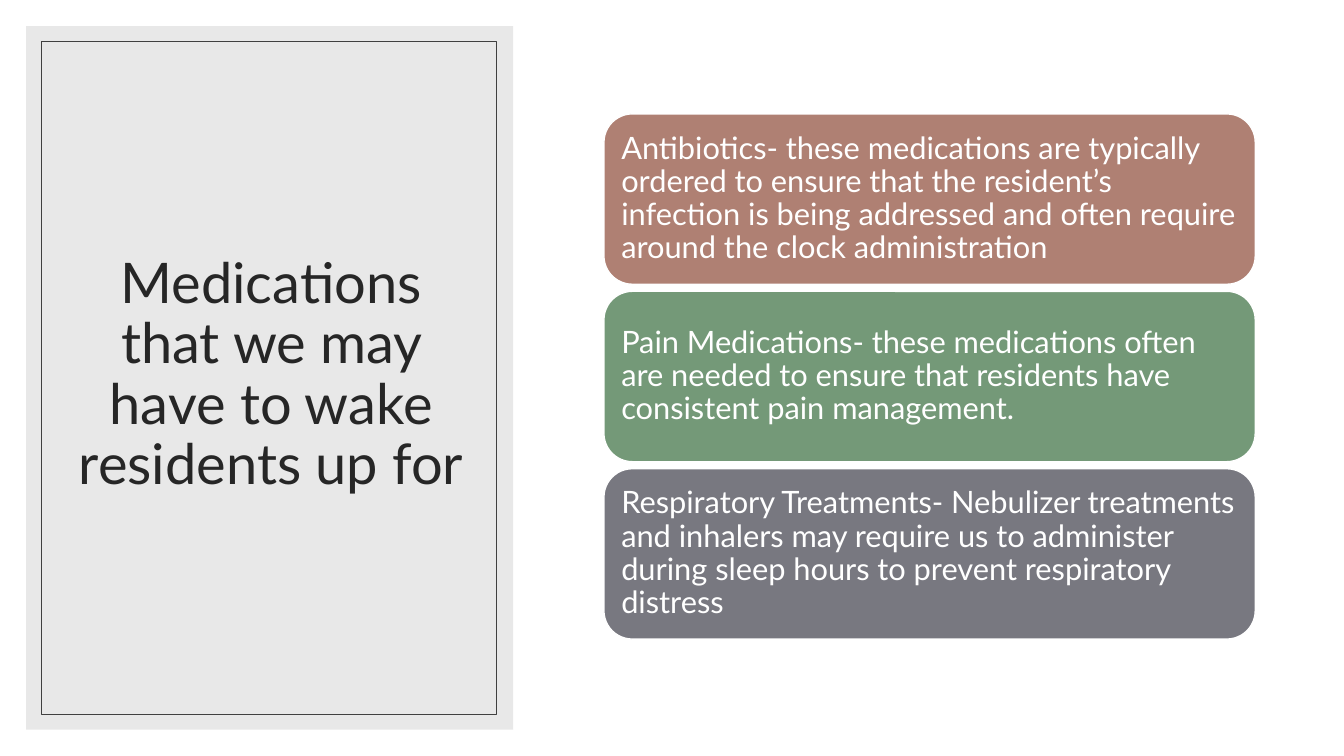
from lxml import etree
from pptx import Presentation
from pptx import util as u
from pptx.dml.color import RGBColor
from pptx.enum import shapes, text
from pptx.oxml.ns import qn

# Content
TITLE = "Medications that we may have to wake residents up for"
CARDS = [
    ("AF8073", "Antibiotics- these medications are typically ordered to ensure that "
               "the resident’s infection is being addressed and often require around "
               "the clock administration"),
    ("749978", "Pain Medications- these medications often are needed to ensure that "
               "residents have consistent pain management."),
    ("787880", "Respiratory Treatments- Nebulizer treatments and inhalers may require "
               "us to administer during sleep hours to prevent respiratory distress"),
]
FONT = "Lato"

# Layout in inches
WIDTH, HEIGHT = 13.33, 7.5
MARGIN, FRAME_GAP = 0.26, 0.15
PANEL = (MARGIN, MARGIN, 4.83, HEIGHT - 2 * MARGIN)
FRAME = (MARGIN + FRAME_GAP, MARGIN + FRAME_GAP,
         4.51, HEIGHT - 2 * (MARGIN + FRAME_GAP))
TITLE_BOX = (0.63, 0.61, 4.12, 6.24)
CARD_LEFT, CARD_TOP, CARD_WIDTH, CARD_HEIGHT = 5.99, 1.13, 6.46, 1.69
CARD_PITCH = 1.76
CARD_INSET = 0.09


def color(value):
    return RGBColor.from_string(value)


def add_block(page, kind, area, fill=None, line=None, weight=1):
    block = page.shapes.add_shape(kind, *map(u.Inches, area))
    block.shadow.inherit = False
    if fill:
        block.fill.solid()
        block.fill.fore_color.rgb = color(fill)
    else:
        block.fill.background()
    if line:
        block.line.color.rgb = color(line)
        block.line.width = u.Pt(weight)
    else:
        block.line.fill.background()
    return block


def write(box, words, size, ink, align):
    frame = box.text_frame
    frame.text = words
    frame.word_wrap = True
    frame.vertical_anchor = text.MSO_ANCHOR.MIDDLE
    para = frame.paragraphs[0]
    para.alignment = align
    para.line_spacing = 0.9
    span = para.runs[0]
    span.font.name = FONT
    span.font.size = u.Pt(size)
    span.font.color.rgb = color(ink)
    return frame


deck = Presentation()
deck.slide_width, deck.slide_height = u.Inches(WIDTH), u.Inches(HEIGHT)
page = deck.slides.add_slide(deck.slide_layouts[6])
page.background.fill.solid()
page.background.fill.fore_color.rgb = color("FFFFFF")

# Title panel, 60% opaque, with a thin inner frame
panel = add_block(page, shapes.MSO_SHAPE.RECTANGLE, PANEL, fill="D9D9D9")
tint = panel.fill._xPr.find(qn("a:solidFill"))[0]
etree.SubElement(tint, qn("a:alpha"), val="60000")
title = page.shapes.add_textbox(*map(u.Inches, TITLE_BOX))
write(title, TITLE, 40, "262626", text.PP_ALIGN.CENTER)
add_block(page, shapes.MSO_SHAPE.RECTANGLE, FRAME, line="404040", weight=0.5)

# Stacked medication cards
for row, (fill, words) in enumerate(CARDS):
    area = (CARD_LEFT, CARD_TOP + row * CARD_PITCH, CARD_WIDTH, CARD_HEIGHT)
    card = add_block(page, shapes.MSO_SHAPE.ROUNDED_RECTANGLE, area, fill, "FFFFFF")
    frame = write(card, words, 22, "FFFFFF", text.PP_ALIGN.LEFT)
    frame.margin_left = frame.margin_right = u.Inches(CARD_INSET)
    frame.margin_top = frame.margin_bottom = u.Inches(CARD_INSET)

deck.save("out.pptx")
